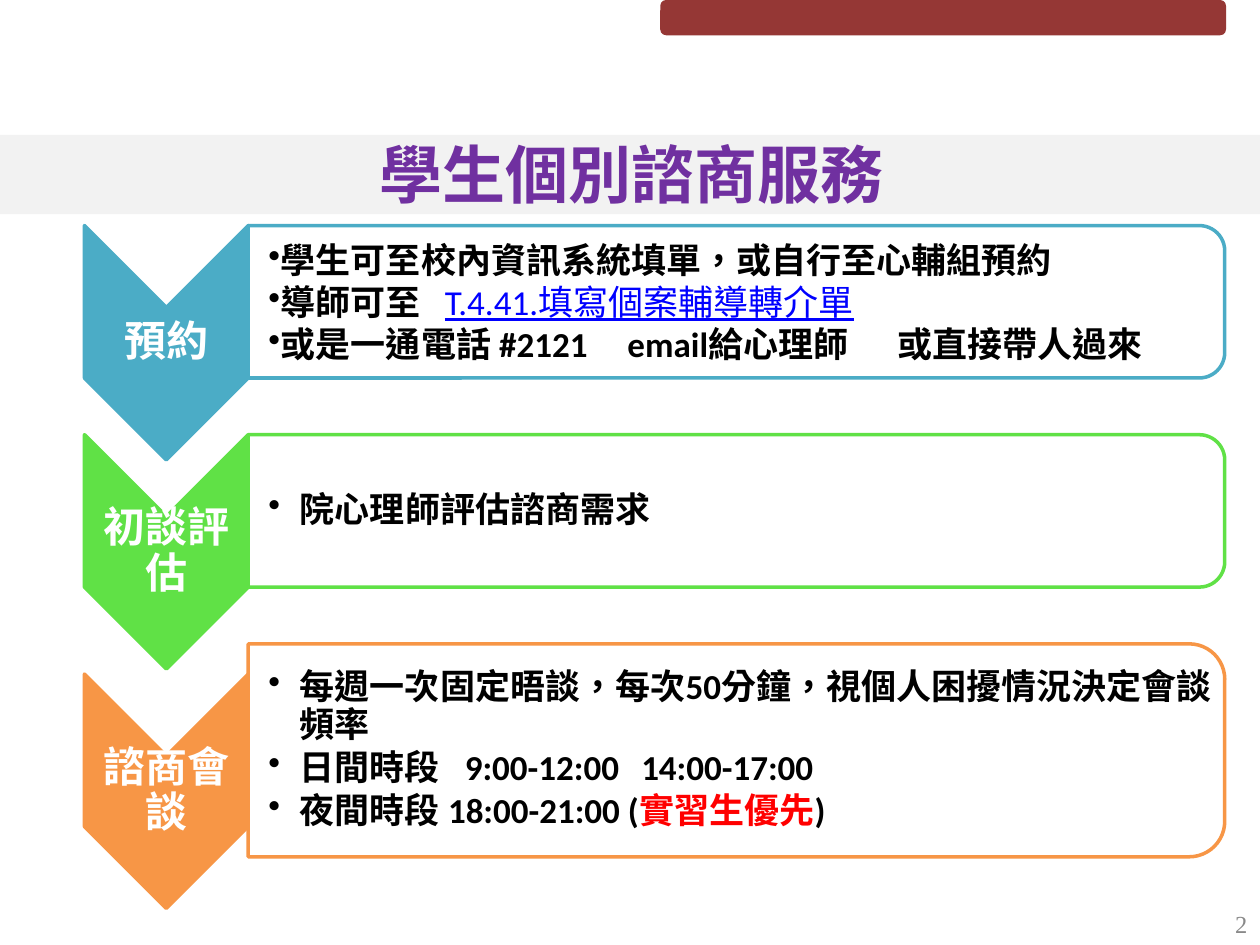
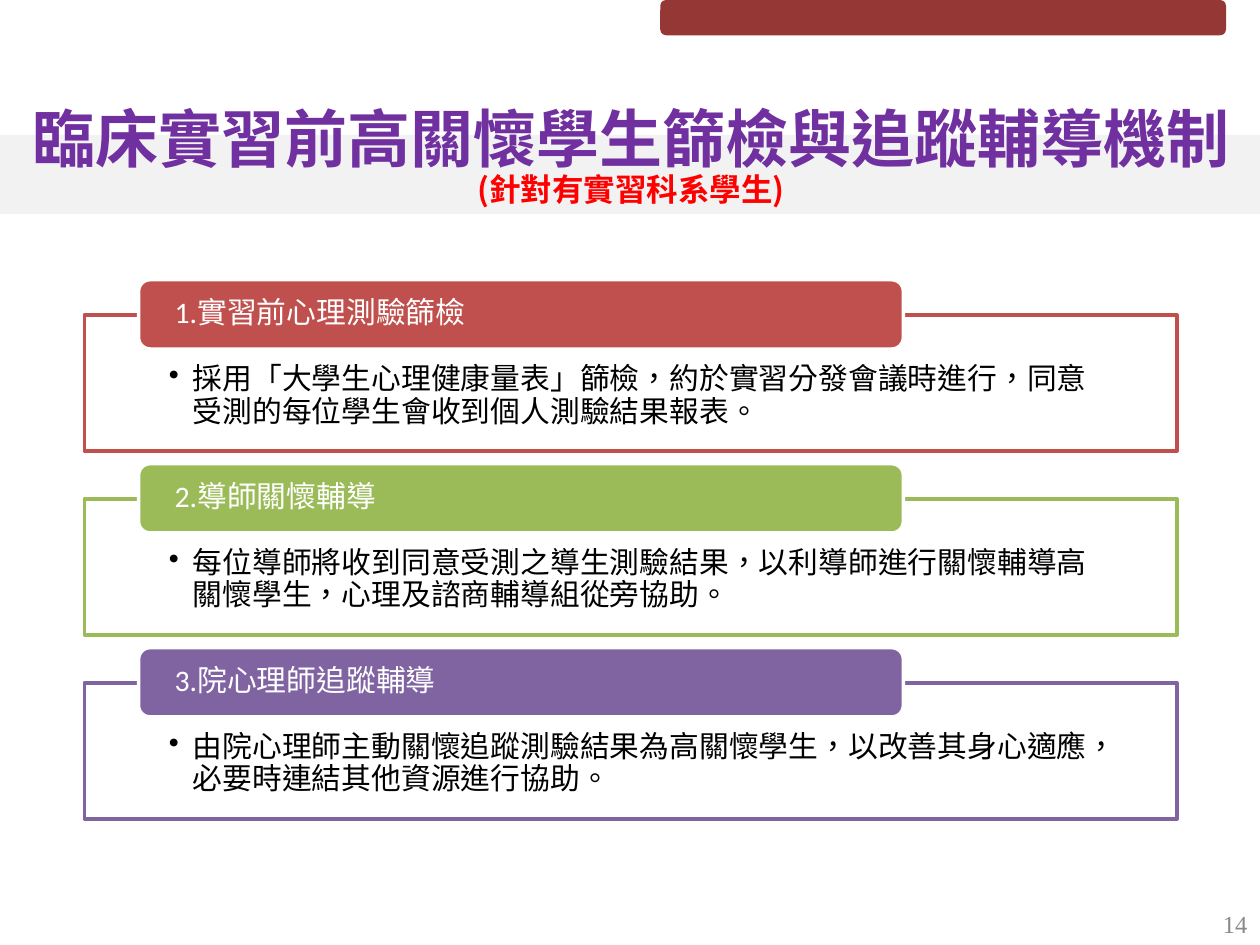
from lxml.etree import SubElement
from pptx import Presentation
from pptx.dml.color import RGBColor
from pptx.enum.shapes import MSO_SHAPE as Preset
from pptx.enum.text import MSO_ANCHOR as Anchor, MSO_AUTO_SIZE as AutoSize, PP_ALIGN as Align
from pptx.oxml.ns import qn
from pptx.util import Emu, Pt

PX = 9144
PURPLE, RED, WHITE, BLACK = "7030A0", "FF0000", "FFFFFF", "000000"
TITLE_FONT, BODY_FONT, NUMBER_FONT = "Noto Sans CJK SC", "Calibri", "Times New Roman"
TITLE = {"size": 36, "color": PURPLE, "bold": True, "font": TITLE_FONT}
SUBTITLE = {**TITLE, "size": 18, "color": RED}
NUMBER = {"size": 14, "color": "898989", "font": NUMBER_FONT}
STEP = {"size": 24, "color": WHITE, "bold": True}
DETAIL = {"size": 20, "color": BLACK, "bold": True}
LINK = {"size": 20, "color": "0000FF", "underline": True}
ALERT = {**DETAIL, "color": RED}
HEADING = {"size": 17, "color": WHITE}
BODY = {"size": 17, "color": BLACK}

COUNSELING = {
    "number": "2",
    "title": [[("學生個別諮商服務", TITLE)]],
    "title_box": (83, 107, 836, 71),
    "anchor": Anchor.MIDDLE,
}
STEPS = [
    {"name": "預約", "color": "4BACC6", "height": 121, "indent": 0, "spacing": 1, "after": 0,
     "details": [
         ([("學生可至校內資訊系統填單，或自行至心輔組預約", DETAIL)], []),
         ([("導師可至\t", DETAIL), ("T.4.41.填寫個案輔導轉介單", LINK)], [140]),
         ([("或是一通電話 #2121\temail給心理師\t或直接帶人過來", DETAIL)], [285, 499]),
     ]},
    {"name": "初談評估", "color": "60E146", "height": 121, "indent": 25, "spacing": 0.9, "after": 3,
     "details": [([("院心理師評估諮商需求", DETAIL)], [])]},
    {"name": "諮商會談", "color": "F79646", "height": 169, "indent": 25, "spacing": 0.9, "after": 3,
     "details": [
         ([("每週一次固定晤談，每次50分鐘，視個人困擾情況決定會談頻率", DETAIL)], []),
         ([("日間時段\t9:00-12:00\t14:00-17:00", DETAIL)], [156, 296]),
         ([("夜間時段 18:00-21:00 (", DETAIL), ("實習生優先", ALERT), (")", DETAIL)], []),
     ]},
]

SCREENING = {
    "number": "14",
    "title": [[("臨床實習前高關懷學生篩檢與追蹤輔導機制", TITLE)],
              [("(針對有實習科系學生)", SUBTITLE)]],
    "title_box": (1, 84, 1000, 101),
    "anchor": Anchor.TOP,
}
STAGES = [
    ("1.實習前心理測驗篩檢", "C0504D",
     "採用「大學生心理健康量表」篩檢，約於實習分發會議時進行，同意受測的每位學生會收到個人測驗結果報表。"),
    ("2.導師關懷輔導", "9BBB59",
     "每位導師將收到同意受測之導生測驗結果，以利導師進行關懷輔導高關懷學生，心理及諮商輔導組從旁協助。"),
    ("3.院心理師追蹤輔導", "8064A2",
     "由院心理師主動關懷追蹤測驗結果為高關懷學生，以改善其身心適應，必要時連結其他資源進行協助。"),
]

CHEVRON_LEFT, CHEVRON_WIDTH, CHEVRON_HEIGHT = 67, 130, 186
STEP_TOP, STEP_GAP, STEP_BASE = 179, 45, 121
PANEL_WIDTH = 775
STAGE_TOP, STAGE_PITCH, STAGE_OVERLAP = 222, 146, 28


def px(value):
    return Emu(round(value * PX))


def rgb(code):
    return RGBColor.from_string(code)


def place(shape, box):
    shape.left, shape.top, shape.width, shape.height = map(px, box)


def format_run(run, size, color, bold=False, underline=False, font=BODY_FONT):
    run.font.size = Pt(size)
    run.font.bold = bold
    run.font.underline = underline
    run.font.color.rgb = rgb(color)
    run.font.name = font
    properties = run.font._element
    properties.set("lang", "zh-TW")
    SubElement(properties, qn("a:ea")).set("typeface", font)


def add_bullet(paragraph, indent, tabs):
    paragraph.level = 1
    properties = paragraph._p.get_or_add_pPr()
    properties.set("marL", str(px(indent)))
    properties.set("indent", str(px(-indent)))
    SubElement(properties, qn("a:buChar")).set("char", "•")
    if tabs:
        tab_list = SubElement(properties, qn("a:tabLst"))
        for position in tabs:
            tab = SubElement(tab_list, qn("a:tab"))
            tab.set("pos", str(px(position)))
            tab.set("algn", "l")


def write(shape, paragraphs, align=Align.LEFT, anchor=Anchor.MIDDLE, margins=(10, 5, 10, 5),
          spacing=1, after=0, indent=None, tabs=()):
    frame = shape.text_frame
    frame.word_wrap = True
    frame.auto_size = AutoSize.NONE
    frame.vertical_anchor = anchor
    (frame.margin_left, frame.margin_top,
     frame.margin_right, frame.margin_bottom) = map(px, margins)
    for index, runs in enumerate(paragraphs):
        paragraph = frame.add_paragraph() if index else frame.paragraphs[0]
        if indent is not None:
            add_bullet(paragraph, indent, tabs[index] if tabs else [])
        paragraph.alignment = align
        paragraph.line_spacing = spacing
        paragraph.space_after = Pt(after)
        for text, style in runs:
            run = paragraph.add_run()
            run.text = text
            format_run(run, **style)


def add_textbox(slide, box, paragraphs, **options):
    write(slide.shapes.add_textbox(*map(px, box)), paragraphs, **options)


def add_block(slide, preset, box, fill, line=None, alpha=None, turned=False):
    left, top, width, height = box
    if turned:
        left, top = left + (width - height) / 2, top + (height - width) / 2
        width, height = height, width
    shape = slide.shapes.add_shape(preset, *map(px, (left, top, width, height)))
    shape.rotation = 90 if turned else 0
    shape.shadow.inherit = False
    shape.fill.solid()
    shape.fill.fore_color.rgb = rgb(fill)
    if alpha:
        color = shape._element.spPr.find(qn("a:solidFill"))[0]
        SubElement(color, qn("a:alpha")).set("val", str(alpha * 1000))
    if line:
        shape.line.color.rgb = rgb(line)
        shape.line.width = Pt(2)
    else:
        shape.line.fill.background()
    return shape


def add_base_slide(presentation, content):
    slide = presentation.slides.add_slide(presentation.slide_layouts[5])
    add_block(slide, Preset.RECTANGLE, (0, 107, 1000, 63), "F2F2F2")
    add_block(slide, Preset.ROUNDED_RECTANGLE, (524, 0, 449, 28), "953735")
    add_textbox(slide, (767, 713, 233, 40), [[(content["number"], NUMBER)]], align=Align.RIGHT)
    title = slide.shapes.title
    title.element.getparent().append(title.element)
    place(title, content["title_box"])
    write(title, content["title"], align=Align.CENTER, anchor=content["anchor"], spacing=0.84)
    return slide


def add_steps(slide):
    top = STEP_TOP
    panel_left = CHEVRON_LEFT + CHEVRON_WIDTH
    for step in STEPS:
        height, color = step["height"], step["color"]
        chevron_top = top + (height - STEP_BASE) / 2
        add_block(slide, Preset.CHEVRON, (CHEVRON_LEFT, chevron_top, CHEVRON_WIDTH, CHEVRON_HEIGHT),
                  color, color, turned=True)
        label_box = (CHEVRON_LEFT, chevron_top + CHEVRON_WIDTH / 2, CHEVRON_WIDTH,
                     CHEVRON_HEIGHT - CHEVRON_WIDTH)
        add_textbox(slide, label_box, [[(step["name"], STEP)]], align=Align.CENTER,
                    margins=(2, 2, 2, 2), spacing=0.9)
        add_block(slide, Preset.ROUND_2_SAME_RECTANGLE, (panel_left, top, PANEL_WIDTH, height),
                  WHITE, color, alpha=90, turned=True)
        inset = round(height / 20)
        add_textbox(slide, (panel_left, top + inset, PANEL_WIDTH - inset, height - 2 * inset),
                    [runs for runs, _ in step["details"]], margins=(16, 1, 1, 1),
                    spacing=step["spacing"], after=step["after"], indent=step["indent"],
                    tabs=[tabs for _, tabs in step["details"]])
        top += height + STEP_GAP


def add_stages(slide):
    for index, (heading, color, body) in enumerate(STAGES):
        top = STAGE_TOP + index * STAGE_PITCH
        panel = add_block(slide, Preset.RECTANGLE, (67, top + STAGE_OVERLAP, 867, 108),
                          WHITE, color, alpha=90)
        write(panel, [[(body, BODY)]], anchor=Anchor.TOP, margins=(67, 39, 67, 13),
              spacing=0.9, after=3, indent=19)
        header = add_block(slide, Preset.ROUNDED_RECTANGLE, (110, top, 607, 55), color, WHITE)
        write(header, [[(heading, HEADING)]], margins=(26, 0, 26, 0), spacing=0.9)


def main():
    presentation = Presentation()
    presentation.slide_width, presentation.slide_height = px(1000), px(750)
    add_steps(add_base_slide(presentation, COUNSELING))
    add_stages(add_base_slide(presentation, SCREENING))
    presentation.save("out.pptx")


if __name__ == "__main__":
    main()
